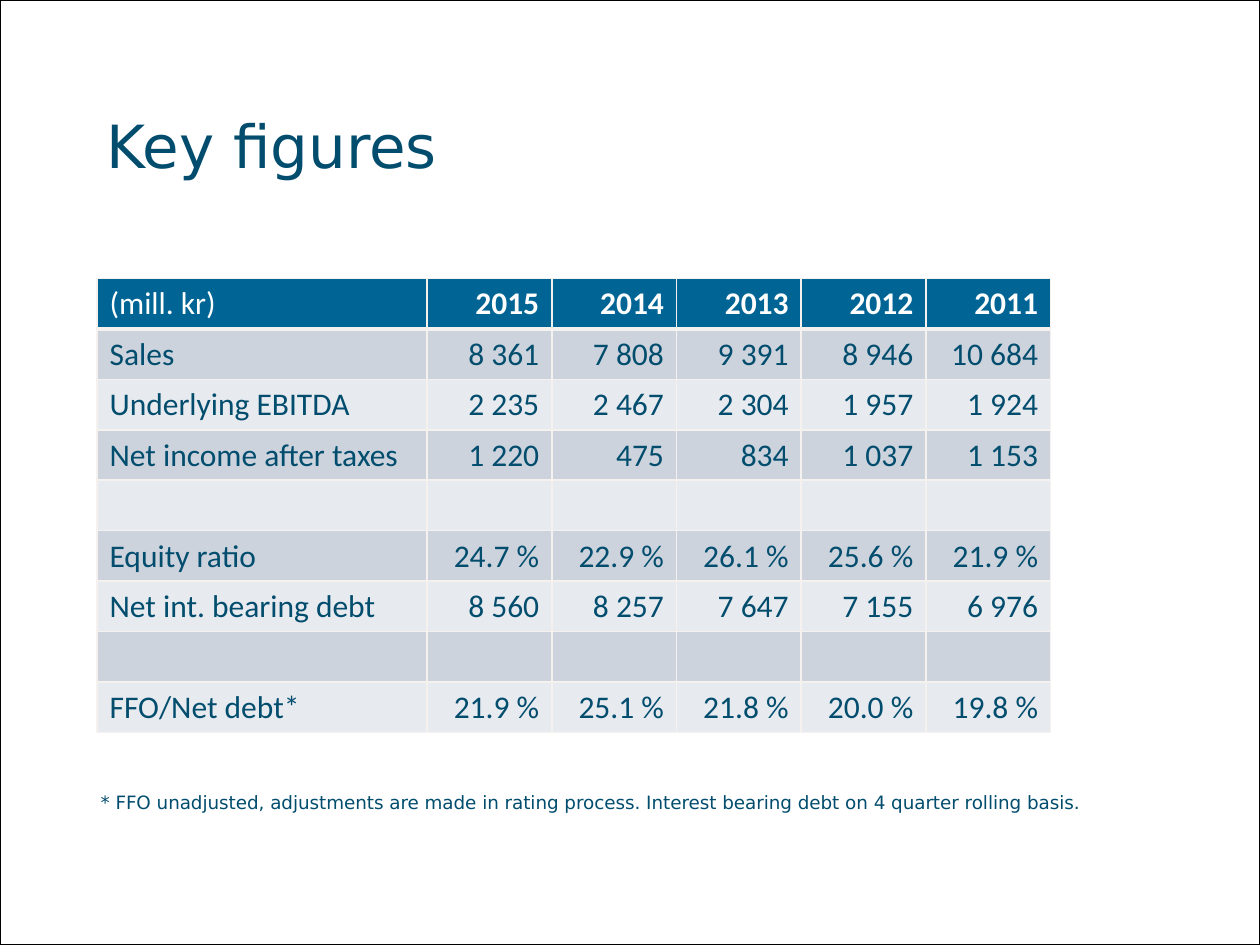
from lxml.etree import SubElement
from pptx import Presentation
from pptx.dml.color import RGBColor
from pptx.enum.shapes import MSO_SHAPE
from pptx.enum.text import MSO_ANCHOR, PP_ALIGN
from pptx.oxml.ns import qn
from pptx.util import Inches, Pt

TITLE = "Key figures"
FOOTNOTE = ("* FFO unadjusted, adjustments are made in rating process. "
            "Interest bearing debt on 4 quarter rolling basis.")
ROWS = [
    ("(mill. kr)", "2015", "2014", "2013", "2012", "2011"),
    ("Sales", "8 361", "7 808", "9 391", "8 946", "10 684"),
    ("Underlying EBITDA", "2 235", "2 467", "2 304", "1 957", "1 924"),
    ("Net income after taxes", "1 220", "475", "834", "1 037", "1 153"),
    ("",) * 6,
    ("Equity ratio", "24.7 %", "22.9 %", "26.1 %", "25.6 %", "21.9 %"),
    ("Net int. bearing debt", "8 560", "8 257", "7 647", "7 155", "6 976"),
    ("",) * 6,
    ("FFO/Net debt*", "21.9 %", "25.1 %", "21.8 %", "20.0 %", "19.8 %"),
]
COLORS = {"text": "024D6E", "header": "006595", "header_text": "FFFFFF",
          "odd": "CCD3DD", "even": "E7EAEF", "border": "F4F1EE", "frame": "000000"}
SLIDE_W, SLIDE_H = 10, 7.5
LABEL_W, YEAR_W, ROW_H = 2.62, 0.99, 0.4


def color(name):
    return RGBColor.from_string(COLORS[name])


def write(tf, text, size=18, font="Calibri", fill="text", bold=False, align=PP_ALIGN.LEFT):
    p = tf.paragraphs[0]
    p.alignment = align
    if not text:
        p.font.size = Pt(size)
        return
    r = p.add_run()
    r.text = text
    r.font.size, r.font.name, r.font.bold = Pt(size), font, bold
    r.font.color.rgb = color(fill)


def add_text(slide, text, box, wrap=True, anchor=MSO_ANCHOR.TOP, **fmt):
    tf = slide.shapes.add_textbox(*map(Inches, box)).text_frame
    tf.word_wrap = wrap
    tf.vertical_anchor = anchor
    write(tf, text, font="DejaVu Sans", **fmt)


def set_borders(cell, top=1, bottom=1):
    """Draw the four cell edges; must run before the cell's fill is set."""
    tc_pr = cell._tc.get_or_add_tcPr()
    for side, width in (("L", 1), ("R", 1), ("T", top), ("B", bottom)):
        ln = SubElement(tc_pr, qn(f"a:ln{side}"), w=str(Pt(width)))
        SubElement(SubElement(ln, qn("a:solidFill")), qn("a:srgbClr"), val=COLORS["border"])


def add_figures(slide, left, top):
    n_rows, n_cols = len(ROWS), len(ROWS[0])
    widths = [LABEL_W] + [YEAR_W] * (n_cols - 1)
    table = slide.shapes.add_table(n_rows, n_cols, Inches(left), Inches(top),
                                   Inches(sum(widths)), Inches(ROW_H * n_rows)).table
    for column, width in zip(table.columns, widths):
        column.width = Inches(width)
    for i, row in enumerate(ROWS):
        header = i == 0
        band = "header" if header else "odd" if i % 2 else "even"
        for j, text in enumerate(row):
            cell = table.cell(i, j)
            set_borders(cell, top=3 if i == 1 else 1, bottom=3 if header else 1)
            cell.fill.solid()
            cell.fill.fore_color.rgb = color(band)
            write(cell.text_frame, text, fill="header_text" if header else "text",
                  bold=header and j > 0, align=PP_ALIGN.RIGHT if j else PP_ALIGN.LEFT)


def main():
    prs = Presentation()
    prs.slide_width, prs.slide_height = Inches(SLIDE_W), Inches(SLIDE_H)
    s = prs.slides.add_slide(prs.slide_layouts[6])

    frame = s.shapes.add_shape(MSO_SHAPE.RECTANGLE, 0, 0, prs.slide_width, prs.slide_height)
    frame.shadow.inherit = False
    frame.fill.background()
    frame.line.color.rgb = color("frame")
    frame.line.width = Pt(1)

    add_text(s, TITLE, (0.75, 0.52, 8.5, 1.25), anchor=MSO_ANCHOR.MIDDLE, size=34)
    add_figures(s, 0.77, 2.21)
    add_text(s, FOOTNOTE, (0.7, 6.23, 8.22, 0.28), wrap=False, size=10.5)
    prs.save("out.pptx")


if __name__ == "__main__":
    main()
